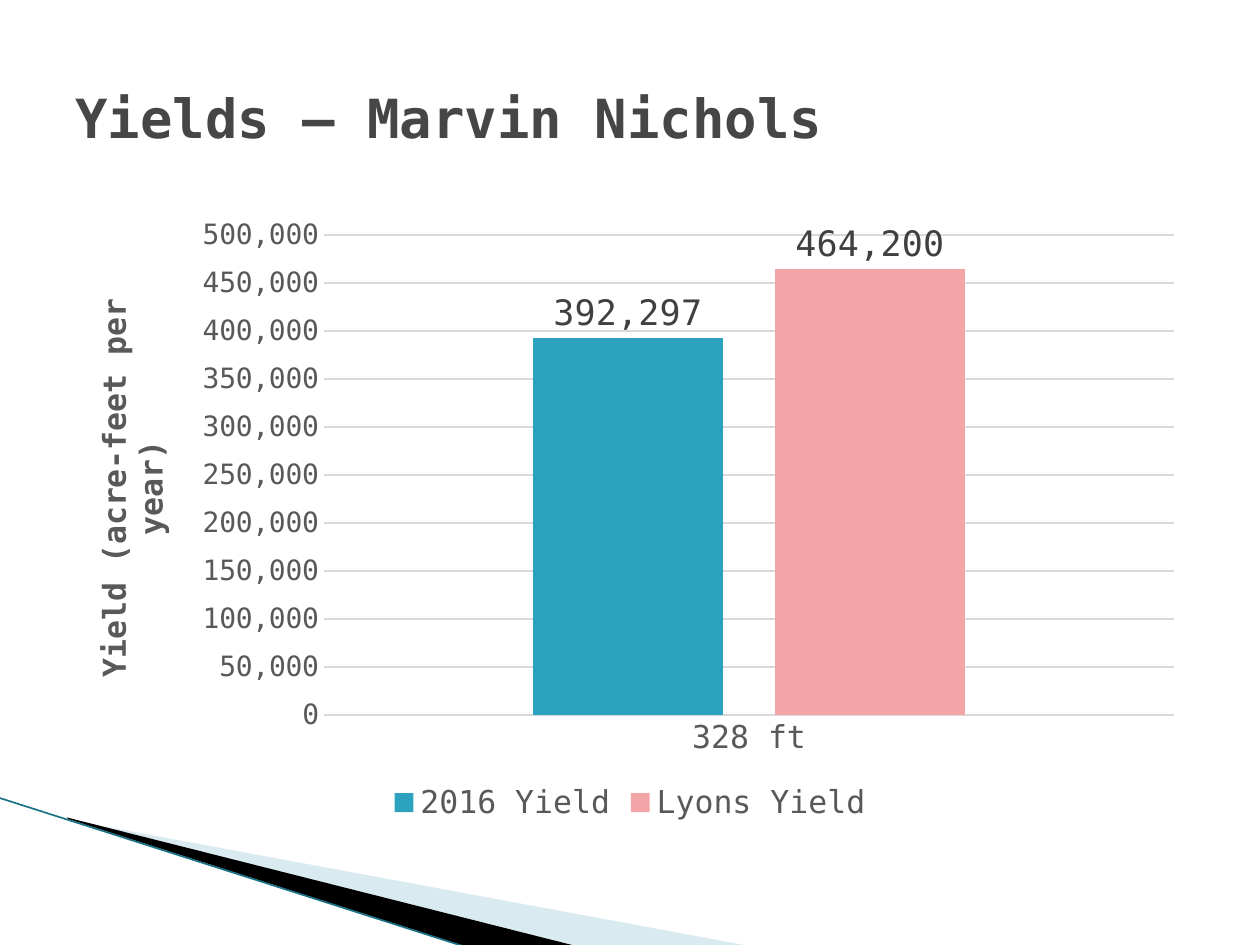
import lxml.etree
import pptx
import pptx.chart.data
import pptx.dml.color
import pptx.enum.chart
import pptx.enum.shapes
import pptx.enum.text
import pptx.oxml.ns
import pptx.util
from pptx.util import Cm

FACE = "DejaVu Sans Mono"
qn = pptx.oxml.ns.qn


def paint(color_format, hex_color):
    color_format.rgb = pptx.dml.color.RGBColor.from_string(hex_color)


def write(text_frame, text, size, color, bold=False):
    run = text_frame.paragraphs[0].add_run()
    run.text = text
    run.font.name = FACE
    run.font.size = pptx.util.Pt(size)
    run.font.bold = bold
    paint(run.font.color, color)


deck = pptx.Presentation()
deck.slide_width, deck.slide_height = Cm(25.4), Cm(19.05)
slide = deck.slides.add_slide(deck.slide_layouts[6])

# Corner decoration: two wedges and a thin edge line
wedges = [
    ([(1.4, 16.53), (15.11, 19.07), (11.58, 19.07), (1.4, 16.51)], "A0CBDC", 40),
    ([(1.35, 16.48), (11.61, 19.07), (9.45, 19.1), (1.37, 16.51)], "000000", 100),
]
for corners, color, opacity in wedges:
    points = [(Cm(x), Cm(y)) for x, y in corners]
    outline = slide.shapes.build_freeform(*points[0])
    outline.add_line_segments(points[1:], close=True)
    wedge = outline.convert_to_shape()
    wedge.shadow.inherit = False
    wedge.line.fill.background()
    wedge.fill.solid()
    paint(wedge.fill.fore_color, color)
    if opacity < 100:
        fill_color = wedge._element.spPr.find(".//" + qn("a:srgbClr"))
        lxml.etree.SubElement(fill_color, qn("a:alpha"), val=str(opacity * 1000))

edge = slide.shapes.add_connector(
    pptx.enum.shapes.MSO_CONNECTOR.STRAIGHT, Cm(-0.03), Cm(16.08), Cm(9.42), Cm(19.1))
edge.line.width = pptx.util.Pt(0.95)
paint(edge.line.color, "1A7288")
lxml.etree.SubElement(edge._element.spPr, qn("a:effectLst"))

heading = slide.shapes.add_textbox(Cm(1.27), Cm(0.76), Cm(22.86), Cm(3.18)).text_frame
heading.word_wrap = True
heading.vertical_anchor = pptx.enum.text.MSO_ANCHOR.MIDDLE
write(heading, "Yields – Marvin Nichols", size=30.8, color="464646", bold=True)

# Yield chart
yields = pptx.chart.data.CategoryChartData(number_format="#,##0")
yields.categories = ["328 ft"]
yields.add_series("2016 Yield", [392297])
yields.add_series("Lyons Yield", [464200])
chart = slide.shapes.add_chart(
    pptx.enum.chart.XL_CHART_TYPE.COLUMN_CLUSTERED,
    Cm(1.27), Cm(4.11), Cm(22.86), Cm(12.57), yields).chart
chart.has_title = False
chart.font.name = FACE
chart.font.size = pptx.util.Pt(10)
chart.has_legend = True
chart.legend.position = pptx.enum.chart.XL_LEGEND_POSITION.BOTTOM
chart.legend.include_in_layout = False

bars = chart.plots[0]
bars.vary_by_categories = False
bars.gap_width, bars.overlap = 219, -27

amounts, levels = chart.value_axis, chart.category_axis
for axis in (amounts, levels):
    axis.major_tick_mark = pptx.enum.chart.XL_TICK_MARK.NONE
    axis.minor_tick_mark = pptx.enum.chart.XL_TICK_MARK.NONE
amounts.minimum_scale = 0
amounts.format.line.fill.background()
amounts.tick_labels.number_format = "#,##0"
amounts.tick_labels.number_format_is_linked = False
write(amounts.axis_title.text_frame, "Yield (acre-feet per year)",
      size=18, color="595959", bold=True)

for rule in (amounts.major_gridlines.format.line, levels.format.line):
    rule.width = pptx.util.Pt(0.75)
    paint(rule.color, "D9D9D9")

fonts = [
    (amounts.tick_labels.font, 16, "595959"),
    (levels.tick_labels.font, 18, "595959"),
    (chart.legend.font, 18, "595959"),
]
for series, color in zip(bars.series, ("2DA2BF", "F2A4A7")):
    series.format.fill.solid()
    paint(series.format.fill.fore_color, color)
    labels = series.data_labels
    labels.show_value = True
    labels.number_format = "#,##0"
    labels.number_format_is_linked = False
    labels.position = pptx.enum.chart.XL_LABEL_POSITION.OUTSIDE_END
    fonts.append((labels.font, 20, "404040"))

for font, size, color in fonts:
    font.name = FACE
    font.size = pptx.util.Pt(size)
    font.bold = False
    paint(font.color, color)

# Inner plot area, as fractions of the chart
plot_area = chart._chartSpace.find(".//" + qn("c:plotArea"))
for automatic in plot_area.findall(qn("c:layout")):
    plot_area.remove(automatic)
layout = lxml.etree.Element(qn("c:layout"))
plot_area.insert(0, layout)
manual = lxml.etree.SubElement(layout, qn("c:manualLayout"))
for tag, value in [("layoutTarget", "inner"), ("xMode", "edge"), ("yMode", "edge"),
                   ("x", "0.23"), ("y", "0.05"), ("w", "0.75"), ("h", "0.77")]:
    lxml.etree.SubElement(manual, qn("c:" + tag), val=value)

deck.save("out.pptx")
